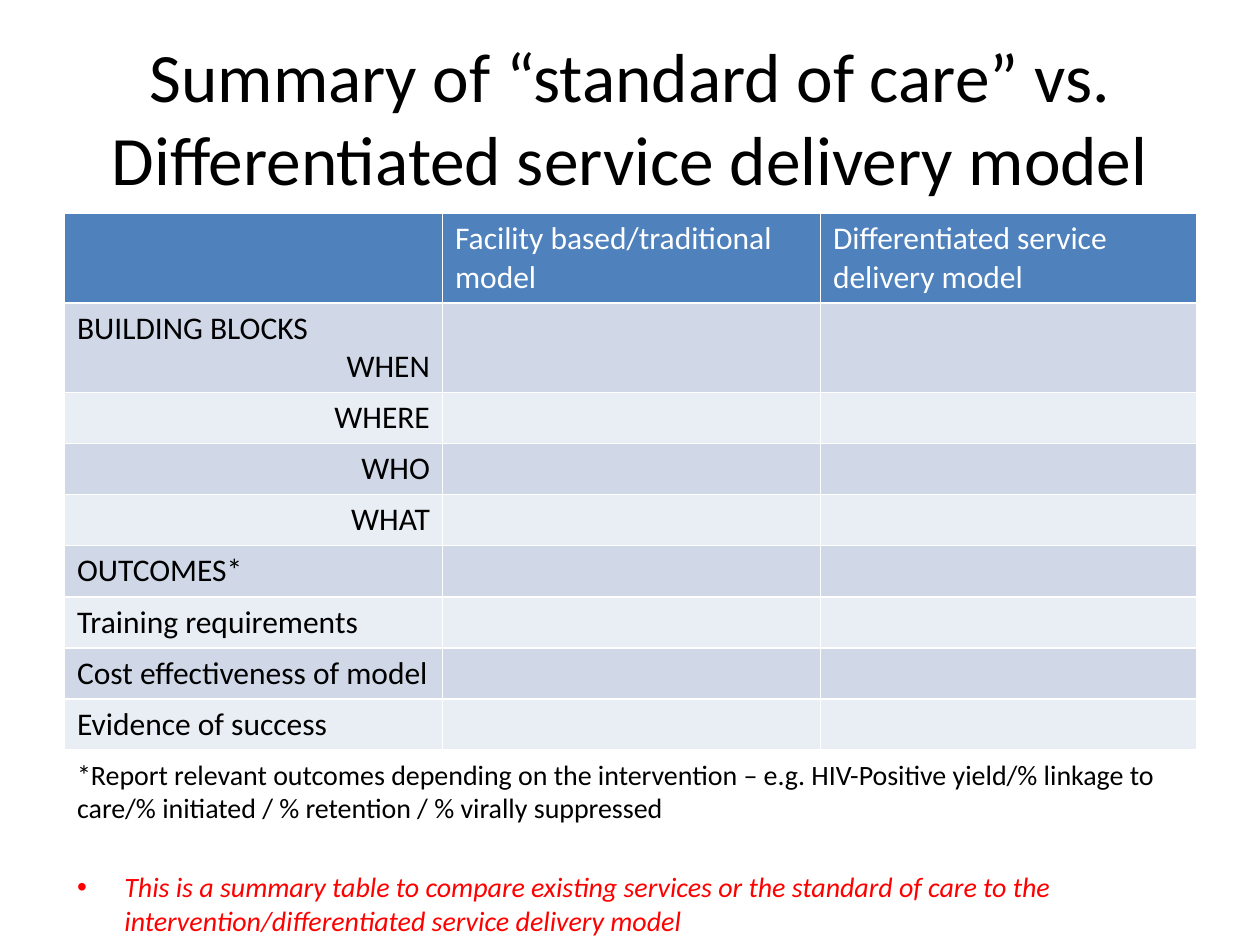
from dataclasses import dataclass

from lxml import etree
from pptx import Presentation
from pptx.dml.color import RGBColor
from pptx.enum import text as t
from pptx.oxml import ns
from pptx.util import Cm, Pt


@dataclass(frozen=True)
class Theme:
    font: str = "Calibri"
    title_size: float = 39.6
    table_size: float = 18
    note_size: float = 16
    ink: str = "000000"
    header_ink: str = "FFFFFF"
    accent: str = "FF0000"
    header_fill: str = "4F81BD"
    bands: tuple = ("D0D8E8", "E9EDF4")


THEME = Theme()
LEFT, RIGHT = t.PP_ALIGN.LEFT, t.PP_ALIGN.RIGHT

TITLE = "Summary of “standard of care” vs. Differentiated service delivery model"
HEADERS = ["", "Facility based/traditional model", "Differentiated service delivery model"]
ROWS = [
    [("BUILDING BLOCKS", LEFT), ("WHEN", RIGHT)],
    [("WHERE", RIGHT)],
    [("WHO", RIGHT)],
    [("WHAT", RIGHT)],
    [("OUTCOMES*", LEFT)],
    [("Training requirements", LEFT)],
    [("Cost effectiveness of model", LEFT)],
    [("Evidence of success", LEFT)],
]
FOOTNOTE = (
    "*Report relevant outcomes depending on the intervention – e.g. HIV-Positive yield/"
    "% linkage to care/% initiated / % retention / % virally suppressed"
)
GUIDANCE = (
    "This is a summary table to compare existing services or the standard of care to the "
    "intervention/differentiated service delivery model"
)


def add_run(paragraph, wording, size, color, italic=False):
    run = paragraph.add_run()
    run.text = wording
    font = run.font
    font.name, font.size = THEME.font, Pt(size)
    font.bold, font.italic = False, italic
    font.color.rgb = RGBColor.from_string(color)


def place(shape, left, top, width, height):
    shape.left, shape.top = Cm(left), Cm(top)
    shape.width, shape.height = Cm(width), Cm(height)


def remove_bullet(paragraph):
    properties = paragraph._p.get_or_add_pPr()
    properties.set("marL", "0")
    properties.set("indent", "0")
    etree.SubElement(properties, ns.qn("a:buNone"))


def fill_title(title):
    place(title, 1.27, 0.76, 22.86, 3.18)
    frame = title.text_frame
    frame.auto_size = t.MSO_AUTO_SIZE.NONE
    frame.vertical_anchor = t.MSO_ANCHOR.MIDDLE
    paragraph = frame.paragraphs[0]
    paragraph.alignment = t.PP_ALIGN.CENTER
    add_run(paragraph, TITLE, THEME.title_size, THEME.ink)


def fill_notes(body):
    place(body, 1.3, 15.14, 22.86, 12.57)
    frame = body.text_frame
    frame.auto_size = t.MSO_AUTO_SIZE.NONE
    footnote = frame.paragraphs[0]
    remove_bullet(footnote)
    add_run(footnote, FOOTNOTE, THEME.note_size, THEME.ink)
    guidance = frame.add_paragraph()
    guidance.space_before = Pt(26)
    add_run(guidance, GUIDANCE, THEME.note_size, THEME.accent, italic=True)


def fill_cell(cell, lines, fill, color):
    """Colour a cell and write its (wording, alignment) lines."""
    cell.fill.solid()
    cell.fill.fore_color.rgb = RGBColor.from_string(fill)
    frame = cell.text_frame
    frame.paragraphs[0].font.size = Pt(THEME.table_size)
    for index, (wording, alignment) in enumerate(lines):
        paragraph = frame.add_paragraph() if index else frame.paragraphs[0]
        paragraph.alignment = alignment
        add_run(paragraph, wording, THEME.table_size, color)


def add_comparison_table(slide):
    frame = slide.shapes.add_table(
        len(ROWS) + 1, len(HEADERS), Cm(1.3), Cm(4.3), Cm(22.83), Cm(10.77)
    )
    table = frame.table
    for column, width in zip(table.columns, (7.62, 7.62, 7.59)):
        column.width = Cm(width)
    for row in table.rows:
        row.height = Cm(1.03)
    for column, heading in enumerate(HEADERS):
        lines = [(heading, LEFT)] if heading else []
        fill_cell(table.cell(0, column), lines, THEME.header_fill, THEME.header_ink)
    for index, lines in enumerate(ROWS):
        band = THEME.bands[index % 2]
        for column in range(len(HEADERS)):
            cell = table.cell(index + 1, column)
            fill_cell(cell, [] if column else lines, band, THEME.ink)


def main():
    presentation = Presentation()
    presentation.slide_width, presentation.slide_height = Cm(25.4), Cm(19.05)
    slide = presentation.slides.add_slide(presentation.slide_layouts[1])
    fill_title(slide.shapes.title)
    fill_notes(slide.placeholders[1])
    add_comparison_table(slide)
    presentation.save("out.pptx")


if __name__ == "__main__":
    main()
